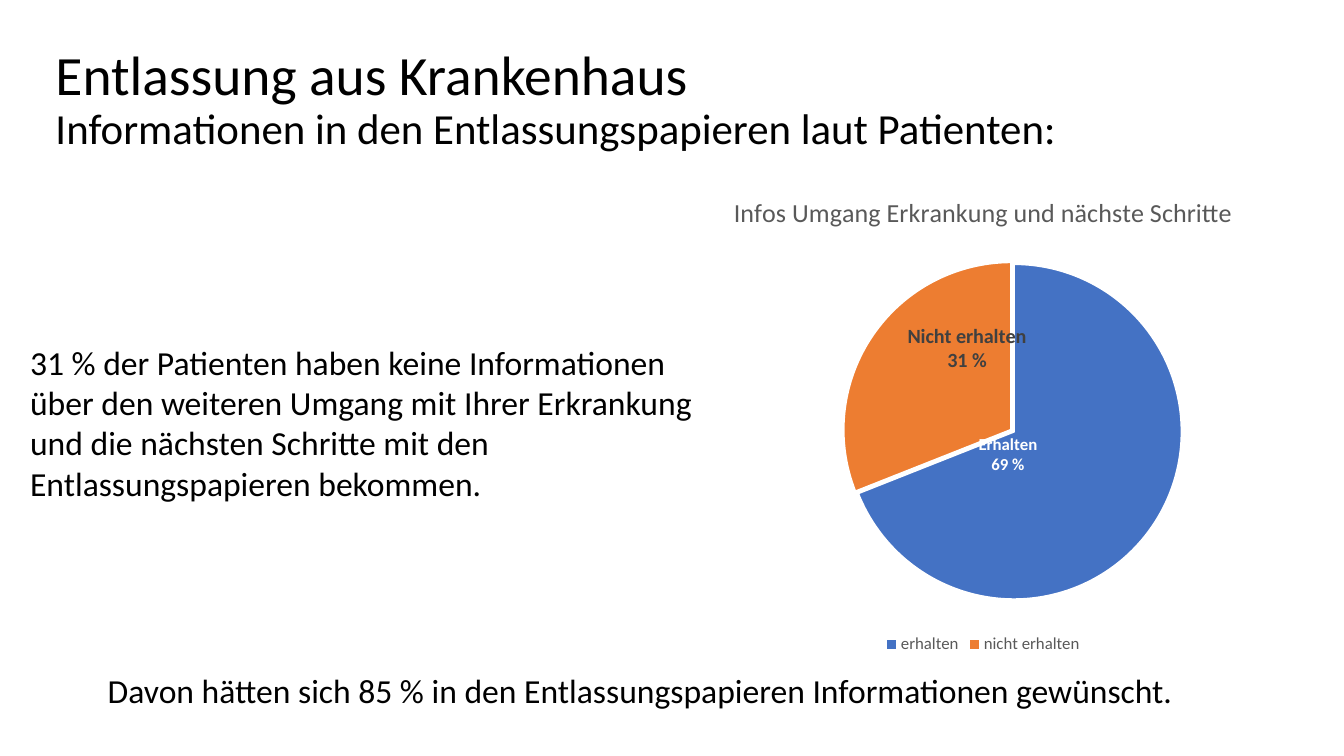
from dataclasses import dataclass

from lxml import etree
from pptx import Presentation
from pptx.chart.data import CategoryChartData
from pptx.dml.color import RGBColor
from pptx.enum.chart import XL_CHART_TYPE, XL_LABEL_POSITION, XL_LEGEND_POSITION
from pptx.enum.text import MSO_ANCHOR, MSO_AUTO_SIZE, PP_ALIGN
from pptx.oxml.ns import qn
from pptx.util import Inches, Pt

PIE = XL_CHART_TYPE.PIE
LABEL_CENTER = XL_LABEL_POSITION.CENTER
LEGEND_BOTTOM = XL_LEGEND_POSITION.BOTTOM
TOP = MSO_ANCHOR.TOP
NO_AUTOFIT = MSO_AUTO_SIZE.NONE
LEFT = PP_ALIGN.LEFT

SLIDE_WIDTH = Inches(13.33)
SLIDE_HEIGHT = Inches(7.5)
TITLE_ONLY = 5


@dataclass(frozen=True)
class Theme:
    font: str = "Calibri"
    text: str = "000000"
    muted: str = "595959"
    dark_label: str = "404040"
    light: str = "FFFFFF"
    received: str = "4472C4"
    missing: str = "ED7D31"
    title_size: float = 39.6
    subtitle_size: float = 30.6
    body_size: float = 24
    chart_title_size: float = 18.6
    large_label_size: float = 14.4
    small_size: float = 12


THEME = Theme()


def area(left, top, width, height):
    """Turn percentages of the slide into left, top, width and height."""
    return (int(SLIDE_WIDTH * left / 100), int(SLIDE_HEIGHT * top / 100),
            int(SLIDE_WIDTH * width / 100), int(SLIDE_HEIGHT * height / 100))


def style_font(font, size, color, bold=False):
    font.name = THEME.font
    font.size = Pt(size)
    font.bold = bold
    font.color.rgb = RGBColor.from_string(color)


def add_title(slide, title, subtitle, box):
    shape = slide.shapes.title
    shape.left, shape.top, shape.width, shape.height = box
    frame = shape.text_frame
    frame.auto_size = NO_AUTOFIT
    frame.word_wrap = True
    frame.vertical_anchor = TOP
    frame.margin_top = Inches(0.07)
    frame.text = f"{title}\v{subtitle}"
    paragraph = frame.paragraphs[0]
    paragraph.alignment = LEFT
    paragraph.line_spacing = 0.9
    for run, size in zip(paragraph.runs, (THEME.title_size, THEME.subtitle_size)):
        style_font(run.font, size, THEME.text)


def add_statement(slide, text, box, line_spacing=1.0, indent=0):
    frame = slide.shapes.add_textbox(*box).text_frame
    frame.word_wrap = True
    frame.text = text
    paragraph = frame.paragraphs[0]
    paragraph.line_spacing = line_spacing
    paragraph._p.get_or_add_pPr().set("marL", str(Inches(indent)))
    style_font(paragraph.runs[0].font, THEME.body_size, THEME.text)


def manual_layout(**values):
    """Build a chart layout element from named settings."""
    layout = etree.Element(qn("c:layout"))
    manual = etree.SubElement(layout, qn("c:manualLayout"))
    for name, value in values.items():
        etree.SubElement(manual, qn(f"c:{name}")).set("val", str(value))
    return layout


def place_plot(chart, x, y, width, height):
    plot_area = chart._chartSpace.chart.plotArea
    for layout in plot_area.findall(qn("c:layout")):
        plot_area.remove(layout)
    plot_area.insert(0, manual_layout(layoutTarget="inner", xMode="edge", yMode="edge",
                                      x=x, y=y, w=width, h=height))


def format_slice(series, index, color, label, size, label_color, shift):
    point = series.points[index]
    point.format.fill.solid()
    point.format.fill.fore_color.rgb = RGBColor.from_string(color)
    point.format.line.color.rgb = RGBColor.from_string(THEME.light)
    point.format.line.width = Pt(1.5)
    data_label = point.data_label
    data_label.text_frame.text = label
    for paragraph in data_label.text_frame.paragraphs:
        for run in paragraph.runs:
            style_font(run.font, size, label_color, bold=True)
    data_label.position = LABEL_CENTER
    # Shift the label from the middle of its slice
    label_element = series._element.findall(f".//{qn('c:dLbl')}")[index]
    label_element.find(qn("c:idx")).addnext(manual_layout(x=shift[0], y=shift[1]))


def add_pie(slide, title, categories, values, slices, box):
    data = CategoryChartData()
    data.categories = categories
    data.add_series("Series 1", values)
    chart = slide.shapes.add_chart(PIE, *box, data).chart
    style_font(chart.font, THEME.small_size, THEME.text)

    # Title and legend
    chart.has_title = True
    title_frame = chart.chart_title.text_frame
    title_frame.text = title
    style_font(title_frame.paragraphs[0].runs[0].font, THEME.chart_title_size, THEME.muted)
    chart.has_legend = True
    chart.legend.position = LEGEND_BOTTOM
    chart.legend.include_in_layout = False
    style_font(chart.legend.font, THEME.small_size, THEME.muted)

    # Slices, slightly pulled apart
    plot = chart.plots[0]
    plot.vary_by_categories = True
    series = plot.series[0]
    for index, settings in enumerate(slices):
        format_slice(series, index, *settings)
    explosion = etree.Element(qn("c:explosion"))
    explosion.set("val", "1")
    series._element.find(qn("c:dPt")).addprevious(explosion)
    place_plot(chart, 0.33, 0.18, 0.41, 0.7)


def main():
    presentation = Presentation()
    presentation.slide_width = SLIDE_WIDTH
    presentation.slide_height = SLIDE_HEIGHT
    slide = presentation.slides.add_slide(presentation.slide_layouts[TITLE_ONLY])

    add_title(slide, "Entlassung aus Krankenhaus",
              "Informationen in den Entlassungspapieren laut Patienten:",
              area(3.38, 5.33, 88.65, 24.93))
    add_pie(slide, "Infos Umgang Erkrankung und nächste Schritte",
            ("erhalten", "nicht erhalten"), (69, 31),
            ((THEME.received, "Erhalten\n69 %", THEME.small_size, THEME.light, (-0.09, -0.05)),
             (THEME.missing, "Nicht erhalten\n31 %", THEME.large_label_size,
              THEME.dark_label, (0.03, -0.07))),
            area(42, 23.07, 62.33, 64))
    add_statement(slide, "Davon hätten sich 85 % in den Entlassungspapieren "
                  "Informationen gewünscht.",
                  area(5.4, 88.53, 91.58, 6.13), line_spacing=0.9, indent=0.25)
    add_statement(slide, "31 % der Patienten haben keine Informationen über den weiteren "
                  "Umgang mit Ihrer Erkrankung und die nächsten Schritte mit den "
                  "Entlassungspapieren bekommen.",
                  area(1.5, 44.53, 53.1, 22.93))

    presentation.save("out.pptx")


if __name__ == "__main__":
    main()
